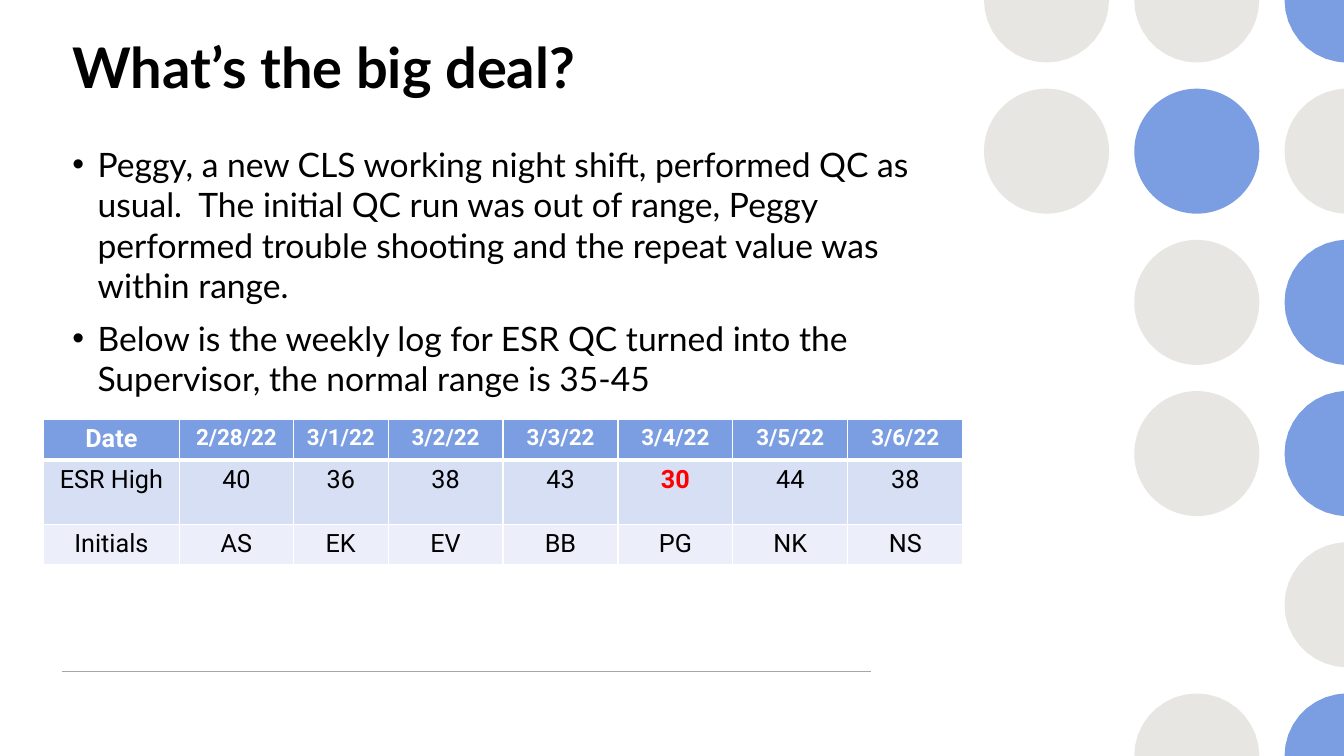
import math
from dataclasses import dataclass

from lxml import etree
from pptx import Presentation
from pptx import util as u
from pptx.dml.color import RGBColor
from pptx.enum import shapes, text
from pptx.oxml import ns

BLUE = RGBColor(0x7B, 0x9D, 0xE1)
STONE = RGBColor(0xE8, 0xE6, 0xE2)
RULE_GRAY = RGBColor(0xA6, 0xA6, 0xA6)
PALE_BLUE = RGBColor(0xD7, 0xDF, 0xF4)
PALEST_BLUE = RGBColor(0xEC, 0xEF, 0xF9)
BLACK = RGBColor(0, 0, 0)
WHITE = RGBColor(0xFF, 0xFF, 0xFF)
RED = RGBColor(0xFF, 0, 0)

SLIDE_WIDTH, SLIDE_HEIGHT = 13.33, 7.5
DOT_RADIUS = 0.62
FIRST_DOT_X, DOT_STEP_X, DOT_STEP_Y = 10.38, 1.49, 1.5
LAST_DOT_COLUMN, LAST_DOT_ROW = 2, 5


@dataclass(frozen=True)
class Dot:
    column: int
    row: int
    color: RGBColor = STONE


@dataclass(frozen=True)
class LogRow:
    values: tuple[str, ...]
    height: float
    fill: RGBColor


DOTS = (
    Dot(0, 0), Dot(1, 0), Dot(2, 0, BLUE),
    Dot(0, 1), Dot(1, 1, BLUE), Dot(2, 1),
    Dot(1, 2), Dot(2, 2, BLUE),
    Dot(1, 3), Dot(2, 3, BLUE),
    Dot(2, 4),
    Dot(1, 5), Dot(2, 5, BLUE),
)
LOG_WIDTHS = (1.35, 1.13, 0.94) + (1.14,) * 5
LOG = (
    LogRow(("Date", "2/28/22", "3/1/22", "3/2/22", "3/3/22", "3/4/22", "3/5/22", "3/6/22"),
           0.37, BLUE),
    LogRow(("ESR High", "40", "36", "38", "43", "30", "44", "38"), 0.64, PALE_BLUE),
    LogRow(("Initials", "AS", "EK", "EV", "BB", "PG", "NK", "NS"), 0.37, PALEST_BLUE),
)
OUT_OF_RANGE = "30"
STORY = (
    "Peggy, a new CLS working night shift, performed QC as usual.  The initial QC run was "
    "out of range, Peggy performed trouble shooting and the repeat value was within range.",
    "Below is the weekly log for ESR QC turned into the Supervisor, the normal range is 35-45",
)


def write(paragraph, words: str, *, size: float, font: str = "Lato", color: RGBColor = BLACK,
          bold: bool = False, align=text.PP_ALIGN.LEFT, before: float = 0,
          bullet: bool = False) -> None:
    """Fill a paragraph with one formatted run."""
    run = paragraph.add_run()
    run.text = words
    run.font.size, run.font.name, run.font.bold = u.Pt(size), font, bold
    run.font.color.rgb = color
    paragraph.alignment = align
    paragraph.space_before = u.Pt(before)
    if bullet:
        properties = paragraph._p.get_or_add_pPr()
        properties.set("marL", str(u.Inches(0.25)))
        properties.set("indent", str(u.Inches(-0.25)))
        etree.SubElement(properties, ns.qn("a:buFont"), typeface="Arial")
        etree.SubElement(properties, ns.qn("a:buChar"), char="•")


def add_frame(slide, left: float, top: float, width: float, height: float):
    box = slide.shapes.add_textbox(*map(u.Inches, (left, top, width, height)))
    box.text_frame.word_wrap = True
    return box.text_frame


def draw_dot(slide, dot: Dot) -> None:
    """Draw a circle, or the half or quarter that the slide's edge leaves."""
    x = FIRST_DOT_X + dot.column * DOT_STEP_X
    y = dot.row * DOT_STEP_Y
    start, end = 0, 360
    if dot.row == 0:
        end = 180
    elif dot.row == LAST_DOT_ROW:
        start = 180
    if dot.column == LAST_DOT_COLUMN:
        start, end = max(start, 90), min(end, 270)

    if end - start == 360:
        circle = slide.shapes.add_shape(
            shapes.MSO_SHAPE.OVAL, u.Inches(x - DOT_RADIUS), u.Inches(y - DOT_RADIUS),
            u.Inches(2 * DOT_RADIUS), u.Inches(2 * DOT_RADIUS))
    else:
        arc = []
        for angle in map(math.radians, range(start, end + 1, 10)):
            arc_x = min(x + DOT_RADIUS * math.cos(angle), SLIDE_WIDTH)
            arc.append((u.Inches(arc_x), u.Inches(y + DOT_RADIUS * math.sin(angle))))
        builder = slide.shapes.build_freeform(u.Inches(min(x, SLIDE_WIDTH)), u.Inches(y))
        builder.add_line_segments(arc, close=True)
        circle = builder.convert_to_shape()
    circle.shadow.inherit = False
    circle.fill.solid()
    circle.fill.fore_color.rgb = dot.color
    circle.line.fill.background()


def draw_footer_rule(slide) -> None:
    rule = slide.shapes.add_connector(
        shapes.MSO_CONNECTOR.STRAIGHT, *map(u.Inches, (0.62, 6.66, 8.64, 6.66)))
    rule.line.color.rgb = RULE_GRAY
    rule.line.width = u.Pt(1)
    etree.SubElement(rule._element.spPr, ns.qn("a:effectLst"))


def set_borders(cell, top: float, bottom: float) -> None:
    """Give a cell white borders, with the widths in points."""
    properties = cell._tc.get_or_add_tcPr()
    widths = {"a:lnL": 1, "a:lnR": 1, "a:lnT": top, "a:lnB": bottom}
    for place, (tag, width) in enumerate(widths.items()):
        border = etree.Element(ns.qn(tag), w=str(u.Pt(width)))
        fill = etree.SubElement(border, ns.qn("a:solidFill"))
        etree.SubElement(fill, ns.qn("a:srgbClr"), val=str(WHITE))
        properties.insert(place, border)


def draw_log(slide) -> None:
    log = slide.shapes.add_table(
        len(LOG), len(LOG_WIDTHS), u.Inches(0.43), u.Inches(4.16),
        u.Inches(sum(LOG_WIDTHS)), u.Inches(sum(row.height for row in LOG))).table
    for column, width in zip(log.columns, LOG_WIDTHS):
        column.width = u.Inches(width)
    for r, row in enumerate(LOG):
        log.rows[r].height = u.Inches(row.height)
        header = r == 0
        for c, value in enumerate(row.values):
            cell = log.cell(r, c)
            cell.fill.solid()
            cell.fill.fore_color.rgb = row.fill
            set_borders(cell, top=3 if r == 1 else 1, bottom=3 if header else 1)
            alert = value == OUT_OF_RANGE
            write(cell.text_frame.paragraphs[0], value, font="Roboto",
                  size=16 if header and c else 18, bold=header or alert,
                  color=WHITE if header else RED if alert else BLACK,
                  align=text.PP_ALIGN.CENTER)


def main() -> None:
    deck = Presentation()
    deck.slide_width, deck.slide_height = u.Inches(SLIDE_WIDTH), u.Inches(SLIDE_HEIGHT)
    slide = deck.slides.add_slide(deck.slide_layouts[6])

    # Decoration
    for dot in DOTS:
        draw_dot(slide, dot)
    draw_footer_rule(slide)

    # Title
    title = add_frame(slide, 0.62, 0.27, 8.02, 1.39)
    write(title.paragraphs[0], "What’s the big deal?", size=40, bold=True)

    # Story
    story = add_frame(slide, 0.62, 1.38, 8.83, 2.37)
    for i, point in enumerate(STORY):
        paragraph = story.add_paragraph() if i else story.paragraphs[0]
        write(paragraph, point, size=24, before=9, bullet=True)

    # Weekly log
    draw_log(slide)

    deck.save("out.pptx")


if __name__ == "__main__":
    main()
